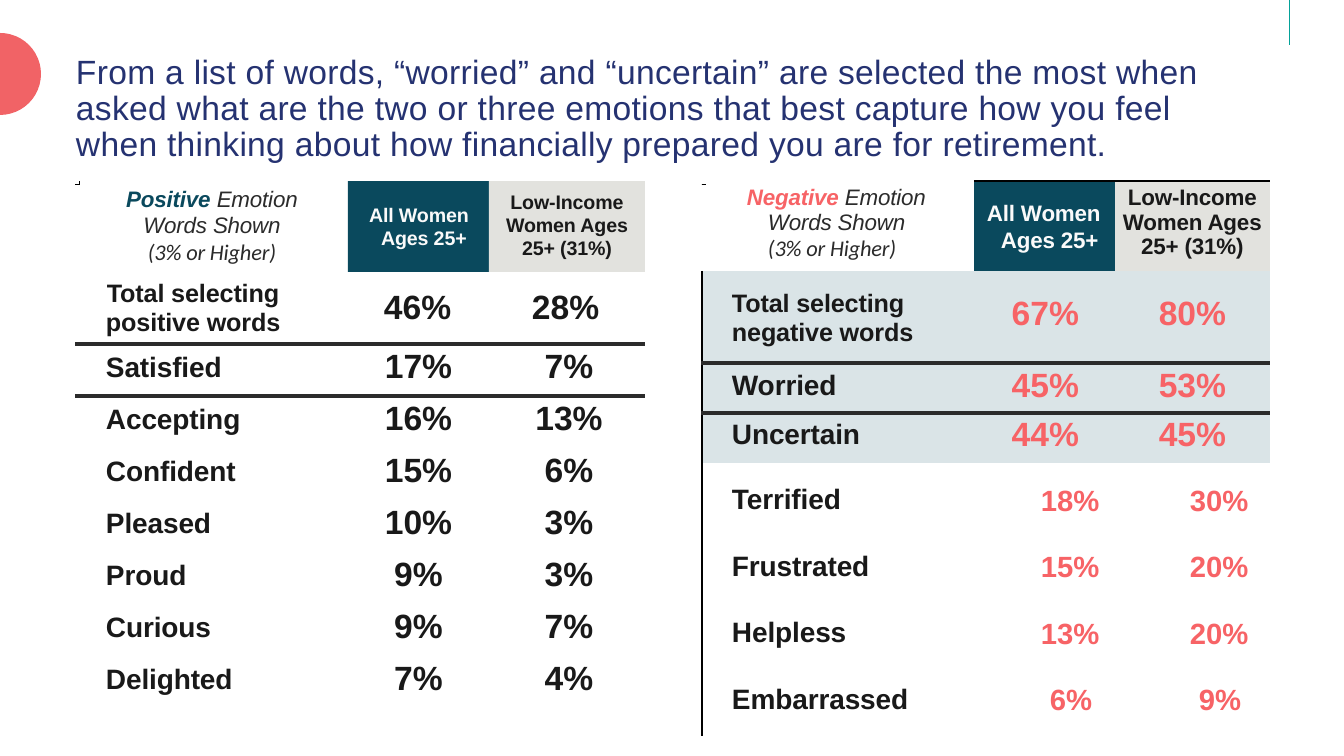
from copy import deepcopy
from math import cos, pi, sin

from lxml.etree import SubElement
from pptx import Presentation
from pptx.dml.color import RGBColor
from pptx.enum.shapes import MSO_CONNECTOR as CONNECTOR, MSO_SHAPE as SHAPE
from pptx.enum.text import MSO_ANCHOR as ANCHOR, PP_ALIGN as ALIGN
from pptx.oxml.ns import qn
from pptx.util import Pt

PX = 914400 / 100.8
NAVY, TEAL, CORAL, PALE, SAND = "253271", "0A495D", "F76366", "DAE4E7", "E2E2DE"
INK, RULE, BLACK, WHITE = "191919", "2B2B2B", "000000", "FAFAFA"
NO_STYLE = "{2D5ABB26-0587-4C30-8999-92F81FD0307C}"

TITLE = ("From a list of words, “worried” and “uncertain” are selected the most when "
         "asked what are the two or three emotions that best capture how you feel "
         "when thinking about how financially prepared you are for retirement.")
ALL_WOMEN = "All Women Ages 25+"
LOW_INCOME = "Low-Income\vWomen Ages\v25+ (31%)"
POSITIVE = [("Satisfied", "17%", "7%"), ("Accepting", "16%", "13%"),
            ("Confident", "15%", "6%"), ("Pleased", "10%", "3%"),
            ("Proud", "9%", "3%"), ("Curious", "9%", "7%"), ("Delighted", "7%", "4%")]
NEGATIVE_TOP = [("Total selecting\vnegative words", "67%", "80%"),
                ("Worried", "45%", "53%"), ("Uncertain", "44%", "45%")]
NEGATIVE_REST = [("Terrified", "18%", "30%"), ("Frustrated", "15%", "20%"),
                 ("Helpless", "13%", "20%"), ("Embarrassed", "6%", "9%")]


def px(length):
    return round(length * PX)


def color(value):
    return RGBColor.from_string(value)


def style(size, ink=INK, bold=True, italic=False, font="Arial", spc=-10, base=0):
    return dict(size=size, ink=ink, bold=bold, italic=italic, font=font, spc=spc, base=base)


def write(para, *pieces, align=None, left=0, first=0, right=0, line=None, tabs=()):
    """Fill a paragraph with (text, style) pieces; margins are in px."""
    props = para._p.get_or_add_pPr()
    for key, value in (("marL", left), ("marR", right), ("indent", first)):
        if value:
            props.set(key, str(px(value)))
    if align is not None:
        para.alignment = align
    if line:
        para.line_spacing = line
    if tabs:
        SubElement(props, qn("a:buNone"))
        stops = SubElement(props, qn("a:tabLst"))
        for stop in tabs:
            SubElement(stops, qn("a:tab"), pos=str(px(stop)), algn="l")
    for text, look in pieces:
        for number, part in enumerate(text.split("\v")):
            if number:
                para.add_line_break()
                para._p[-1].append(deepcopy(run._r.rPr))
            if not part:
                continue
            run = para.add_run()
            run.text = part
            font = run.font
            font.name, font.size = look["font"], Pt(look["size"])
            font.bold, font.italic = look["bold"], look["italic"]
            font.color.rgb = color(look["ink"])
            run._r.rPr.set("spc", str(look["spc"]))
            if look["base"]:
                run._r.rPr.set("baseline", str(look["base"]))


def frame(holder, top=0, anchor=ANCHOR.TOP):
    holder.word_wrap = True
    holder.margin_left = holder.margin_right = holder.margin_bottom = 0
    holder.margin_top = px(top)
    holder.vertical_anchor = anchor
    return holder.paragraphs[0]


def text_box(slide, box, top=0, anchor=ANCHOR.TOP):
    holder = slide.shapes.add_textbox(*map(px, box)).text_frame
    return holder, frame(holder, top, anchor)


def paint(shape, fill):
    shape.shadow.inherit = False
    shape.fill.solid()
    shape.fill.fore_color.rgb = color(fill)
    shape.line.fill.background()


def block(slide, box, fill, top=0):
    shape = slide.shapes.add_shape(SHAPE.RECTANGLE, *map(px, box))
    paint(shape, fill)
    return frame(shape.text_frame, top)


def border(cell, side, ink, width):
    props = cell._tc.get_or_add_tcPr()
    edge = SubElement(props, qn("a:ln" + side), w=str(Pt(width)))
    SubElement(SubElement(edge, qn("a:solidFill")), qn("a:srgbClr"), val=ink)
    order = ["lnL", "lnR", "lnT", "lnB"]
    tags = [qn("a:" + name) for name in order]
    edges = sorted((e for e in props if e.tag in tags), key=lambda e: tags.index(e.tag))
    props[:] = edges + [e for e in props if e.tag not in tags]


def plain_table(slide, left, top, columns, rows):
    box = (left, top, sum(columns), sum(rows))
    table = slide.shapes.add_table(len(rows), len(columns), *map(px, box)).table
    table._tbl.tblPr.find(qn("a:tableStyleId")).text = NO_STYLE
    table.first_row = table.horz_banding = False
    for column, width in zip(table.columns, columns):
        column.width = px(width)
    for row, height in zip(table.rows, rows):
        row.height = px(height)
    for cell in table.iter_cells():
        cell.fill.background()
        cell.margin_left = cell.margin_right = cell.margin_top = cell.margin_bottom = 0
    return table


def cell_text(cell, top):
    cell.margin_top = px(top)
    return cell.text_frame.paragraphs[0]


def fill_cell(cell, fill):
    cell.fill.solid()
    cell.fill.fore_color.rgb = color(fill)


def heading(word, ink):
    return ((word, style(16, ink, italic=True)),
            (" Emotion\vWords Shown\v", style(16, RULE, bold=False, italic=True)),
            ("(3% or Higher)", style(16, RULE, bold=False, italic=True, font="Calibri")))


def decorations(slide):
    # Half disc at the left edge
    radius, middle, steps = 41, 74, 24
    arc = [(px(radius * sin(pi * n / steps)), px(middle - radius * cos(pi * n / steps)))
           for n in range(steps + 1)]
    outline = slide.shapes.build_freeform(*arc[0])
    outline.add_line_segments(arc[1:])
    paint(outline.convert_to_shape(), "F16366")
    # Thin rule at the top right
    rule = slide.shapes.add_connector(CONNECTOR.STRAIGHT, px(1289), 0, px(1289), px(45))
    rule.line.color.rgb = color("04A299")
    rule.line.width = Pt(0.5)
    SubElement(rule._element.spPr, qn("a:effectLst"))
    # Corner ticks
    for tick in ((79, 181, 1, 4), (75, 184, 4, 1), (702, 184, 4, 1)):
        block(slide, tick, BLACK)


def title(slide, box):
    _, para = text_box(slide, box, 6, ANCHOR.MIDDLE)
    write(para, (TITLE, style(24, NAVY, bold=False, spc=22)), left=1, line=Pt(25.9))


def positive_panel(slide, x, y):
    # Column heads
    write(block(slide, (x + 273, y, 141, 91), TEAL, 23), (ALL_WOMEN, style(14, WHITE)),
          align=ALIGN.LEFT, left=33, first=-12, line=Pt(16.1))
    write(block(slide, (x + 414, y, 156, 91), SAND, 10), (LOW_INCOME, style(14)),
          align=ALIGN.CENTER, line=0.98)
    # Emotion rows
    table = plain_table(slide, x, y + 128, [259, 159, 152], [35] + [52] * 6 + [44])
    table.cell(0, 1).merge(table.cell(0, 2))
    write(cell_text(table.cell(0, 0), 0), ("positive words", style(18)), left=31, line=Pt(19.9))
    for row, (word, *shares) in enumerate(POSITIVE, 1):
        write(cell_text(table.cell(row, 0), 8), (word, style(20)), left=31)
        for column, share in enumerate(shares, 1):
            write(cell_text(table.cell(row, column), 4), (share, style(24, spc=0)),
                  align=ALIGN.CENTER, left=10 if column == 1 else 0)
    for row in (0, 1):
        for column in range(3):
            border(table.cell(row, column), "B", RULE, 3)
    # Heading and total
    holder, para = text_box(slide, (x + 29, y + 3, 196, 125), 2)
    write(para, *heading("Positive", TEAL), align=ALIGN.CENTER, left=20, line=0.99)
    total = holder.add_paragraph()
    total.space_before = Pt(8.6)
    write(total, ("Total selecting", style(18)), align=ALIGN.CENTER, right=18)
    for left, share in ((308, "46%"), (456, "28%")):
        _, para = text_box(slide, (x + left, y + 104, 71, 43), 1)
        write(para, (share, style(24, spc=0)), left=1)


def negative_panel(slide, x, y):
    table = plain_table(slide, x, y, [4, 268, 141, 155], [90, 92, 50, 50, 202])
    # Column heads
    write(cell_text(table.cell(0, 1), 5), *heading("Negative", CORAL),
          left=62, first=-21, line=0.99)
    write(cell_text(table.cell(0, 2), 19), (ALL_WOMEN, style(16, WHITE)),
          left=27, first=-14, line=Pt(19))
    write(cell_text(table.cell(0, 3), 5), (LOW_INCOME, style(16)),
          align=ALIGN.CENTER, line=0.99)
    for column, fill in ((2, TEAL), (3, SAND)):
        fill_cell(table.cell(0, column), fill)
        border(table.cell(0, column), "T", BLACK, 1)
    # Shaded rows
    tops = ((17, 24), (7, 4), (6, 3))
    for row, ((word, first, second), (word_top, share_top)) in enumerate(zip(NEGATIVE_TOP, tops), 1):
        write(cell_text(table.cell(row, 1), word_top), (word, style(18 if row == 1 else 20)),
              left=26, line=Pt(21.1) if row == 1 else None)
        share = style(24, CORAL, spc=0)
        write(cell_text(table.cell(row, 2), share_top), (first, share), align=ALIGN.RIGHT, right=36)
        write(cell_text(table.cell(row, 3), share_top), (second, share), align=ALIGN.CENTER)
        for column in range(4):
            fill_cell(table.cell(row, column), PALE)
            if row < 3:
                border(table.cell(row, column), "B", RULE, 3)
    # Remaining emotions, set with tabs in one wide cell
    table.cell(4, 0).merge(table.cell(4, 3))
    para = cell_text(table.cell(4, 0), 1)
    for number, (word, first, second) in enumerate(NEGATIVE_REST):
        if number:
            para = table.cell(4, 0).text_frame.add_paragraph()
            para.space_before = Pt(7.2)
        shift = 9 if len(first) == 2 else 0
        write(para, (word + "\t", style(20)),
              (f"{first}\t{second}", style(36, CORAL, spc=0, base=-3000)),
              left=30, tabs=(309 + shift, 458 + shift))
    for row in range(1, 5):
        border(table.cell(row, 0), "L", BLACK, 1)


def main():
    deck = Presentation()
    deck.slide_width, deck.slide_height = px(1344), px(756)
    slide = deck.slides.add_slide(deck.slide_layouts[6])
    decorations(slide)
    title(slide, (75, 48, 1159, 116))
    positive_panel(slide, 75, 181)
    negative_panel(slide, 702, 181)
    deck.save("out.pptx")


if __name__ == "__main__":
    main()
